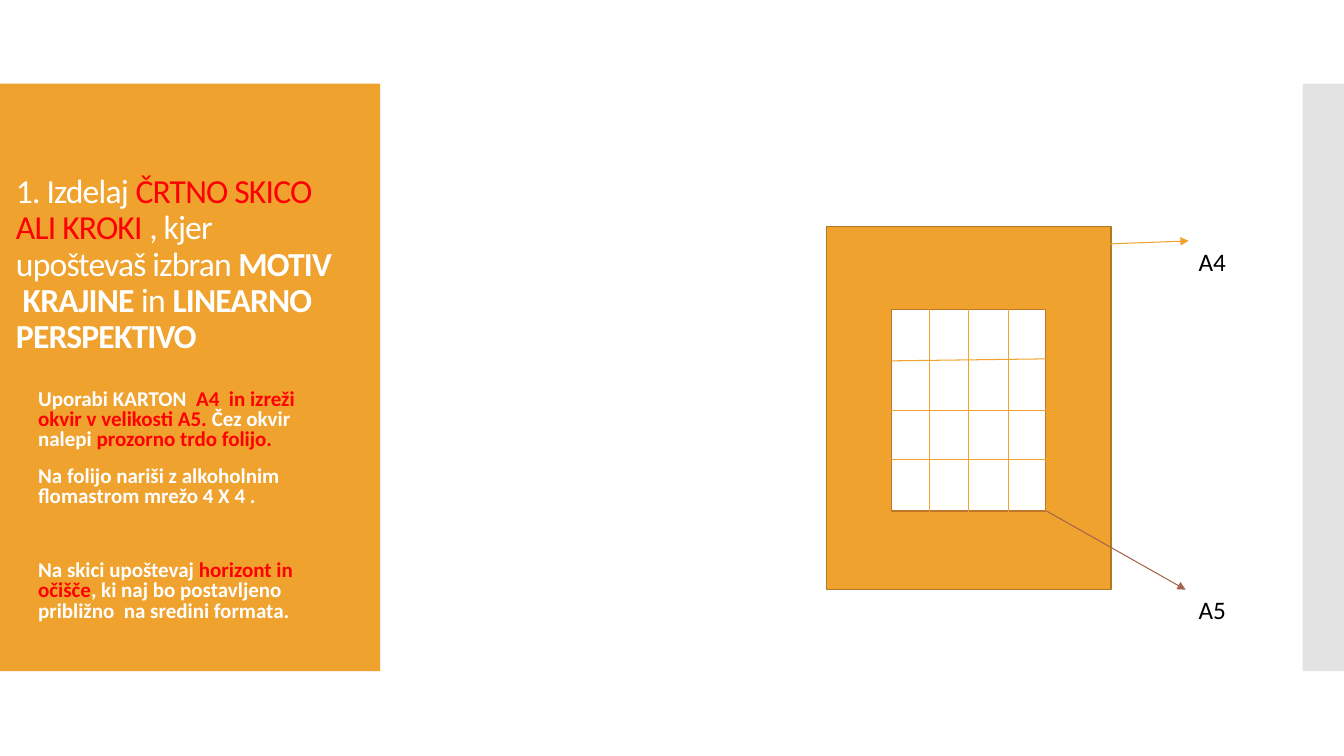
from lxml.etree import SubElement
from pptx import Presentation
from pptx.dml.color import RGBColor
from pptx.enum.shapes import MSO_CONNECTOR as Connector, MSO_SHAPE as Shape
from pptx.enum.text import MSO_ANCHOR as Anchor
from pptx.oxml.ns import qn
from pptx.util import Inches, Pt

ORANGE, BROWN, WHITE, RED, BLACK = "F0A22E", "A5644E", "FFFFFF", "FF0000", "000000"

TITLE = [
    ("1. Izdelaj ", WHITE, False),
    ("ČRTNO SKICO ALI KROKI ", RED, False),
    (", kjer upoštevaš izbran ", WHITE, False),
    ("MOTIV  KRAJINE ", WHITE, True),
    ("in ", WHITE, False),
    ("LINEARNO PERSPEKTIVO", WHITE, True),
]
STEPS = [
    (0, [
        ("Uporabi KARTON  ", WHITE, True),
        ("A4  in izreži okvir v velikosti A5. ", RED, True),
        ("Čez okvir nalepi ", WHITE, True),
        ("prozorno trdo folijo.", RED, True),
    ]),
    (12, [("Na folijo nariši z alkoholnim flomastrom mrežo 4 X 4 .", WHITE, True)]),
    (38.6, [
        ("Na skici upoštevaj ", WHITE, True),
        ("horizont in očišče", RED, True),
        (", ki naj bo postavljeno približno  na sredini formata.", WHITE, True),
    ]),
]


def color(value):
    """Turn a hex string into a colour."""
    return RGBColor.from_string(value)


def add_panel(page, left, top, width, height, fill, outline=None):
    """Add a flat rectangle with an optional outline."""
    panel = page.shapes.add_shape(
        Shape.RECTANGLE, Inches(left), Inches(top), Inches(width), Inches(height))
    panel.shadow.inherit = False
    panel.fill.solid()
    panel.fill.fore_color.rgb = color(fill)
    if outline:
        panel.line.color.rgb = color(outline)
        panel.line.width = Pt(0.85)
    else:
        panel.line.fill.background()


def add_line(page, start, end, stroke=ORANGE, arrow=False):
    """Add a thin straight line, with an arrowhead at its end if asked."""
    line = page.shapes.add_connector(
        Connector.STRAIGHT, *(Inches(value) for value in (*start, *end)))
    line.line.color.rgb = color(stroke)
    line.line.width = Pt(0.75)
    if arrow:
        SubElement(line.line._get_or_add_ln(), qn("a:tailEnd"), type="triangle")
    SubElement(line._element.spPr, qn("a:effectLst"))


def add_text(page, left, top, width, height, paragraphs, size,
             spacing=1.0, tracking=0, anchor=Anchor.TOP):
    """Add a wrapped text box from (space before, spans) paragraphs."""
    box = page.shapes.add_textbox(
        Inches(left), Inches(top), Inches(width), Inches(height))
    frame = box.text_frame
    frame.word_wrap = True
    frame.vertical_anchor = anchor
    for index, (gap, spans) in enumerate(paragraphs):
        para = frame.add_paragraph() if index else frame.paragraphs[0]
        para.line_spacing = spacing
        para.space_before = Pt(gap)
        para.font.name = "Calibri"
        para.font.size = Pt(size)
        for text, ink, bold in spans:
            span = para.add_run()
            span.text = text
            span.font.color.rgb = color(ink)
            span.font.bold = bold
            if tracking:
                span._r.get_or_add_rPr().set("spc", str(tracking))


def add_grid(page):
    """Draw the four by four grid on the foil window."""
    for column in range(1, 4):
        across = 8.83 + 0.39 * column
        add_line(page, (across, 3.07), (across, 5.14))
    add_line(page, (8.84, 3.58), (10.4, 3.56))
    for down in (4.07, 4.56):
        add_line(page, (8.84, down), (10.38, down))


def main():
    """Build the slide and save it."""
    deck = Presentation()
    deck.slide_width, deck.slide_height = Inches(13.33), Inches(7.5)
    page = deck.slides.add_slide(deck.slide_layouts[6])
    add_panel(page, 0, 0.83, 3.77, 5.83, ORANGE)
    add_panel(page, 12.92, 0.83, 0.41, 5.83, "E3E3E3")
    add_text(page, 0.06, 1.83, 3.38, 1.75, [(0, TITLE)], 24,
             spacing=0.9, tracking=-60, anchor=Anchor.BOTTOM)
    add_text(page, 0.28, 3.82, 3.1, 2.54, STEPS, 15, spacing=0.8)
    add_panel(page, 8.2, 2.25, 2.82, 3.6, ORANGE, "B27822")
    add_panel(page, 8.84, 3.07, 1.53, 2, WHITE, "C17529")
    add_grid(page)
    add_line(page, (11.01, 2.42), (11.79, 2.39), arrow=True)
    add_line(page, (10.38, 5.07), (11.76, 5.85), BROWN, arrow=True)
    for label, top in (("A4", 2.39), ("A5", 5.85)):
        add_text(page, 11.79, top, 0.63, 0.4, [(0, [(label, BLACK, False)])], 18)
    deck.save("out.pptx")


if __name__ == "__main__":
    main()
